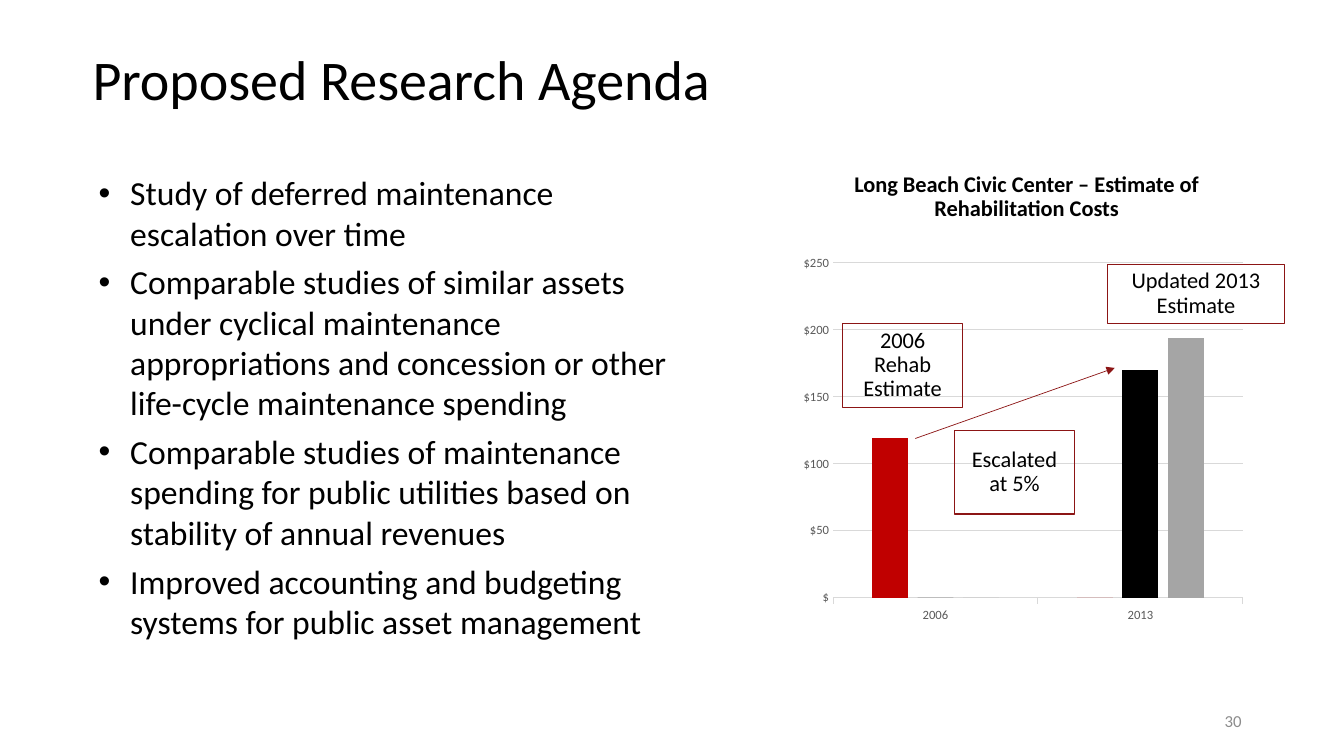
from lxml.etree import SubElement
from pptx import Presentation
from pptx.chart.data import CategoryChartData
from pptx.dml.color import RGBColor
from pptx.enum.chart import XL_CHART_TYPE, XL_TICK_MARK
from pptx.enum.shapes import MSO_CONNECTOR, MSO_SHAPE
from pptx.enum.text import MSO_ANCHOR, PP_ALIGN
from pptx.oxml.ns import qn
from pptx.util import Pt

FONT = "Calibri"
COLORS = {
    "text": "000000", "number": "8C8C8C", "axis": "595959", "grid": "D9D9D9",
    "callout": "8C1515", "rehab": "C00000", "escalated": "000000", "updated": "A5A5A5",
}


def color(name):
    return RGBColor.from_string(COLORS[name])


def write(shape, texts, size, name="text", anchor=MSO_ANCHOR.TOP,
          align=PP_ALIGN.LEFT, line_spacing=1.0, bold=False):
    """Fill a shape with one paragraph per text and return the paragraphs."""
    frame = shape.text_frame
    frame.word_wrap = True
    frame.vertical_anchor = anchor
    frame.text = "\n".join(texts)
    for paragraph in frame.paragraphs:
        paragraph.alignment = align
        paragraph.line_spacing = line_spacing
        paragraph.font.name = FONT
        paragraph.font.size = Pt(size)
        paragraph.font.bold = bold
        paragraph.font.color.rgb = color(name)
    return frame.paragraphs


presentation = Presentation()
presentation.slide_width = Pt(960)
presentation.slide_height = Pt(540)
slide = presentation.slides.add_slide(presentation.slide_layouts[6])
shapes = slide.shapes

# Title and slide number
title = shapes.add_textbox(Pt(59), Pt(16.6), Pt(835), Pt(84))
write(title, ["Proposed Research Agenda"], 40, anchor=MSO_ANCHOR.MIDDLE, line_spacing=0.9)
slide_number = shapes.add_textbox(Pt(678), Pt(500.4), Pt(216), Pt(28.8))
write(slide_number, ["30"], 12, "number", MSO_ANCHOR.MIDDLE, PP_ALIGN.RIGHT)

# Agenda bullets
agenda = [
    "Study of deferred maintenance escalation over time",
    "Comparable studies of similar assets under cyclical maintenance "
    "appropriations and concession or other life-cycle maintenance spending",
    "Comparable studies of maintenance spending for public utilities based on "
    "stability of annual revenues",
    "Improved accounting and budgeting systems for public asset management",
]
agenda_box = shapes.add_textbox(Pt(63.4), Pt(119.5), Pt(433.4), Pt(345))
for paragraph in write(agenda_box, agenda, 24):
    paragraph.space_after = Pt(6)
    properties = paragraph._p.get_or_add_pPr()
    properties.set("marL", str(Pt(22.5)))
    properties.set("indent", str(Pt(-22.5)))
    SubElement(properties, qn("a:buFont"), typeface="Arial")
    SubElement(properties, qn("a:buChar"), char="•")

# Cost chart
costs = CategoryChartData()
costs.categories = ["2006", "2013"]
costs.add_series("Series 1", (119_000_000, 0))
costs.add_series("Series 2", (0, 170_000_000))
costs.add_series("Series 3", (0, 194_000_000))
chart = shapes.add_chart(XL_CHART_TYPE.COLUMN_CLUSTERED,
                         Pt(567.4), Pt(177.1), Pt(326.9), Pt(272.9), costs).chart
chart.has_title = False
chart.has_legend = False
chart.font.name = FONT
chart.font.size = Pt(10)
chart.font.color.rgb = color("text")
plot = chart.plots[0]
plot.vary_by_categories = False
plot.gap_width = 219
plot.overlap = -27
for series, name in zip(plot.series, ("rehab", "escalated", "updated")):
    series.format.fill.solid()
    series.format.fill.fore_color.rgb = color(name)

year_axis, cost_axis = chart.category_axis, chart.value_axis
for axis in (year_axis, cost_axis):
    axis.tick_labels.font.name = FONT
    axis.tick_labels.font.size = Pt(9)
    axis.tick_labels.font.color.rgb = color("axis")
year_axis.major_tick_mark = XL_TICK_MARK.OUTSIDE
cost_axis.major_tick_mark = XL_TICK_MARK.NONE
for line in (year_axis.format.line, cost_axis.major_gridlines.format.line):
    line.color.rgb = color("grid")
    line.width = Pt(0.75)
cost_axis.format.line.fill.background()
cost_axis.minimum_scale = 0
cost_axis.maximum_scale = 250_000_000
cost_axis.major_unit = 50_000_000
cost_axis.tick_labels.number_format = '"$"#,,'
cost_axis.tick_labels.number_format_is_linked = False

# Escalation arrow
arrow = shapes.add_connector(MSO_CONNECTOR.STRAIGHT, Pt(653.8), Pt(313.2), Pt(796.3), Pt(262.8))
arrow.line.color.rgb = color("callout")
arrow.line.width = Pt(0.5)
SubElement(arrow.line._get_or_add_ln(), qn("a:tailEnd"), type="triangle")
SubElement(arrow._element.spPr, qn("a:effectLst"))

# Callouts
callouts = [
    ("2006 Rehab Estimate", 601.9, 231.1, 85.7, 59.8),
    ("Escalated at 5%", 681.8, 307.4, 85.7, 59.8),
    ("Updated 2013 Estimate", 791.3, 188.6, 126, 42.5),
]
for text, left, top, width, height in callouts:
    callout = shapes.add_shape(MSO_SHAPE.RECTANGLE, Pt(left), Pt(top), Pt(width), Pt(height))
    callout.shadow.inherit = False
    callout.fill.background()
    callout.line.color.rgb = color("callout")
    callout.line.width = Pt(0.75)
    write(callout, [text], 16, anchor=MSO_ANCHOR.MIDDLE, align=PP_ALIGN.CENTER, line_spacing=0.9)

# Chart heading
heading = shapes.add_textbox(Pt(567.4), Pt(120.2), Pt(331.9), Pt(28.8))
write(heading, ["Long Beach Civic Center – Estimate of Rehabilitation Costs"], 16,
      align=PP_ALIGN.CENTER, line_spacing=0.9, bold=True)

presentation.save("out.pptx")
